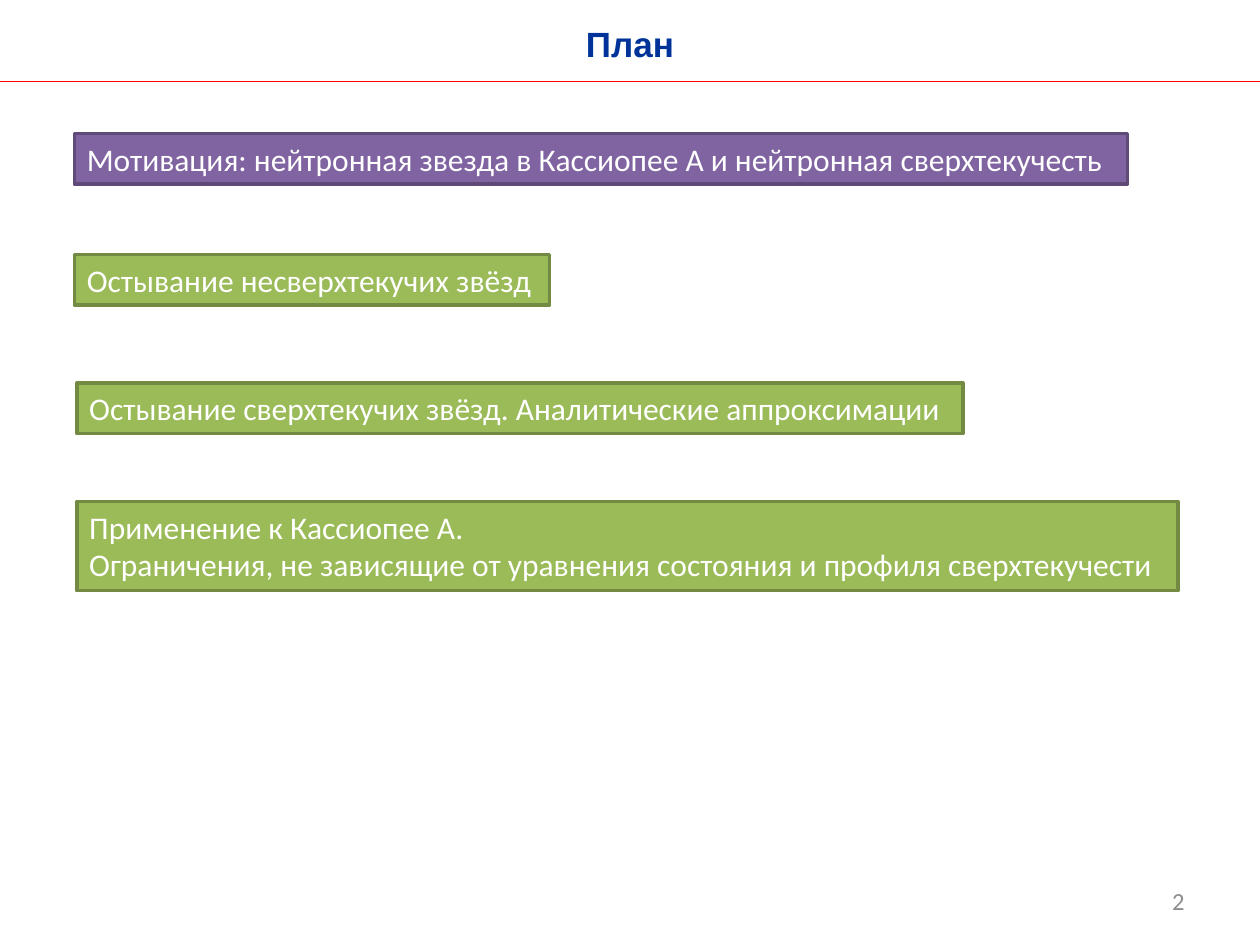
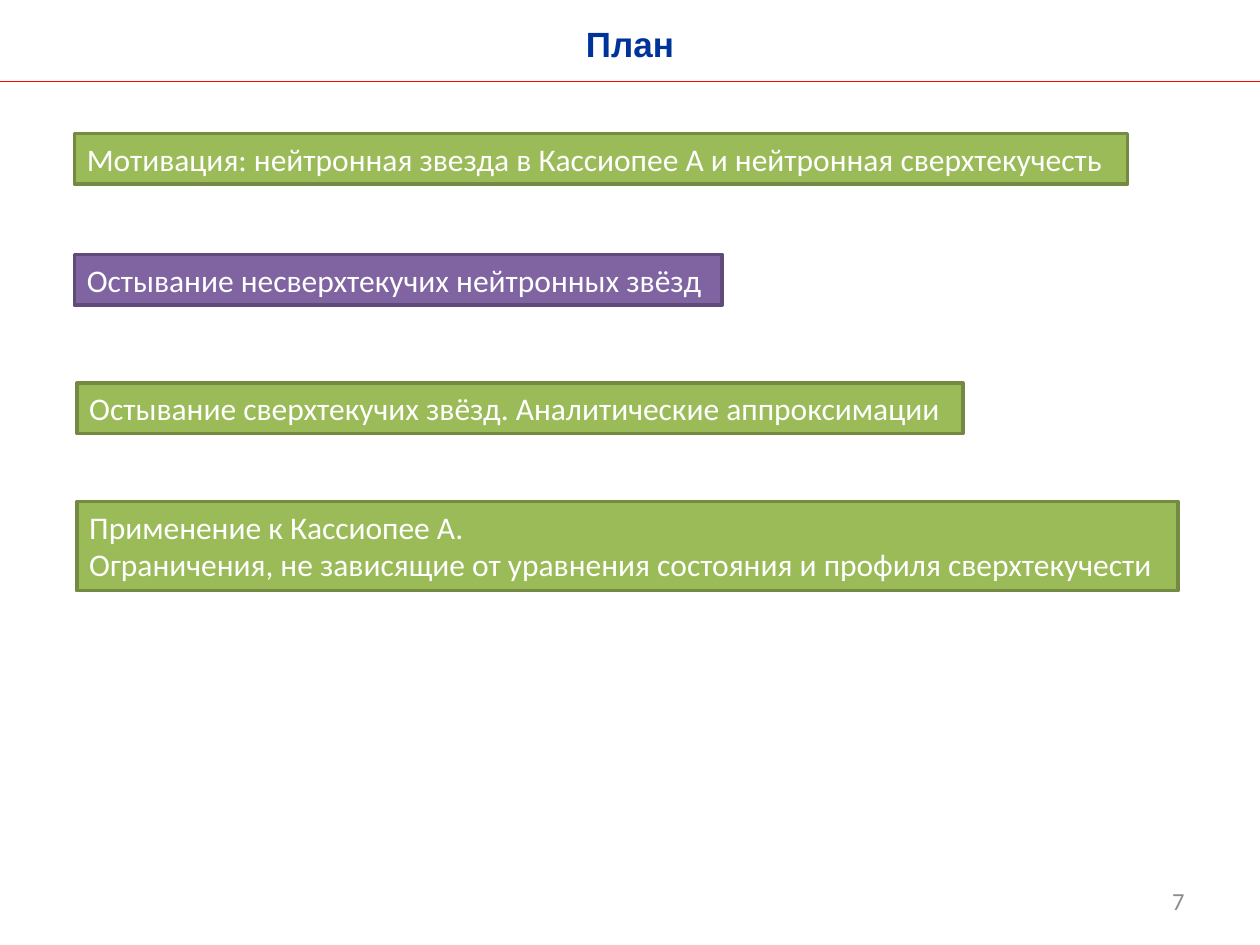
import dataclasses

import lxml.etree
import pptx
import pptx.dml.color
import pptx.enum.shapes
import pptx.enum.text
import pptx.oxml.ns
import pptx.util

Cm = pptx.util.Cm
Pt = pptx.util.Pt
Align = pptx.enum.text.PP_ALIGN
Anchor = pptx.enum.text.MSO_ANCHOR


@dataclasses.dataclass(frozen=True)
class Font:
    name: str
    size: int
    color: str
    bold: bool = False


@dataclasses.dataclass(frozen=True)
class Theme:
    title: Font = Font("Arial", 20, "003399", True)
    item: Font = Font("Calibri", 18, "FFFFFF")
    number: Font = Font("Calibri", 14, "8C8C8C")
    rule: str = "FF0000"
    # Fill and border
    plain: tuple = ("9BBB59", "738A42")
    active: tuple = ("8064A2", "5F4A78")


THEME = Theme()
WIDTH, HEIGHT = 25.4, 19.05

# Boxes in cm: left, top, width, height
HEAD = (0, 0.33, WIDTH, 1.32)
FOOT = (18.21, 17.65, 5.92, 1.02)
BODY = (1.5, 2.69, 22.25, 9.22)

# Plan items: indent and top within the body, width, lines
MOTIVE = (0, 0, 21.23,
          ["Мотивация: нейтронная звезда в Кассиопее А и нейтронная сверхтекучесть"])
NORMAL = (0, 2.44, 9.58, ["Остывание несверхтекучих звёзд"])
NEUTRON = (0, 2.44, 13.06, ["Остывание несверхтекучих нейтронных звёзд"])
SUPER = (0.05, 5.03, 17.86,
         ["Остывание сверхтекучих звёзд. Аналитические аппроксимации"])
APPLY = (0.05, 7.42, 22.2,
         ["Применение к Кассиопее А.",
          "Ограничения, не зависящие от уравнения состояния и профиля сверхтекучести"])

# Slide number, active item, items
PLANS = [
    (2, 0, [MOTIVE, NORMAL, SUPER, APPLY]),
    (7, 1, [MOTIVE, NEUTRON, SUPER, APPLY]),
]


def tint(code):
    return pptx.dml.color.RGBColor.from_string(code)


def write(shape, lines, font, align=Align.LEFT, anchor=Anchor.TOP):
    frame = shape.text_frame
    frame.word_wrap = True
    frame.vertical_anchor = anchor
    for i, line in enumerate(lines):
        para = frame.add_paragraph() if i else frame.paragraphs[0]
        para.alignment = align
        run = para.add_run()
        run.text = line
        run.font.name = font.name
        run.font.size = Pt(font.size)
        run.font.bold = font.bold
        run.font.color.rgb = tint(font.color)


def add_head(slide, box, text):
    left, top, width, height = box
    # Title
    title = slide.shapes.add_textbox(Cm(left), Cm(top), Cm(width), Cm(1.09))
    write(title, [text], THEME.title, Align.CENTER)
    # Rule along the lower edge
    base = Cm(top + height)
    rule = slide.shapes.add_connector(
        pptx.enum.shapes.MSO_CONNECTOR.STRAIGHT,
        Cm(left), base, Cm(left + width), base)
    rule.line.color.rgb = tint(THEME.rule)
    rule.line.width = Pt(0.75)
    lxml.etree.SubElement(rule._element.spPr, pptx.oxml.ns.qn("a:effectLst"))


def add_foot(slide, box, number):
    label = slide.shapes.add_textbox(*map(Cm, box))
    write(label, [str(number)], THEME.number, Align.RIGHT, Anchor.MIDDLE)


def add_plan(slide, box, items, active):
    left, top = box[:2]
    for i, (indent, drop, width, lines) in enumerate(items):
        # Padding plus one text line each
        height = 0.24 + 0.78 * len(lines)
        bar = slide.shapes.add_shape(
            pptx.enum.shapes.MSO_SHAPE.RECTANGLE,
            Cm(left + indent), Cm(top + drop), Cm(width), Cm(height))
        fill, edge = THEME.active if i == active else THEME.plain
        bar.shadow.inherit = False
        bar.fill.solid()
        bar.fill.fore_color.rgb = tint(fill)
        bar.line.color.rgb = tint(edge)
        bar.line.width = Pt(2)
        write(bar, lines, THEME.item)


def main():
    deck = pptx.Presentation()
    deck.slide_width, deck.slide_height = Cm(WIDTH), Cm(HEIGHT)
    for number, active, items in PLANS:
        slide = deck.slides.add_slide(deck.slide_layouts[6])
        add_head(slide, HEAD, "План")
        add_foot(slide, FOOT, number)
        add_plan(slide, BODY, items, active)
    deck.save("out.pptx")


if __name__ == "__main__":
    main()
